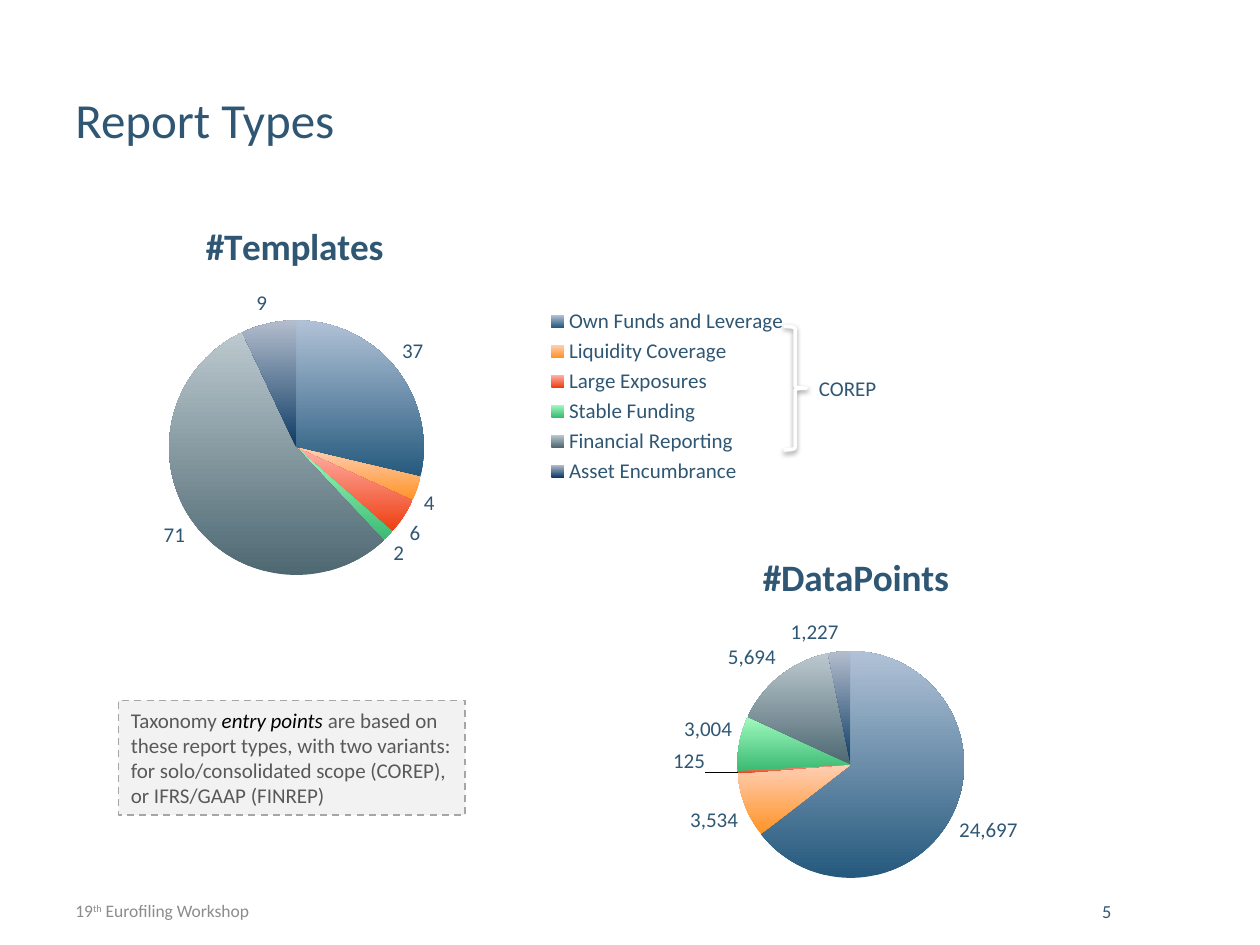
from lxml import etree
from pptx import Presentation
from pptx import util as u
from pptx.chart.data import CategoryChartData
from pptx.dml.color import RGBColor
from pptx.enum import chart as charts, dml, shapes, text
from pptx.oxml import ns

NAVY = RGBColor(0x2F, 0x57, 0x73)
GREY = RGBColor(0x8C, 0x8C, 0x8C)
DARK_GREY = RGBColor(0x59, 0x59, 0x59)
PALE_GREY = RGBColor(0xF2, 0xF2, 0xF2)
BORDER_GREY = RGBColor(0xA6, 0xA6, 0xA6)
BLACK = RGBColor(0, 0, 0)
WHITE = RGBColor(0xFF, 0xFF, 0xFF)
# Bottom and top colour of each report type
SLICES = [
    (RGBColor(0x25, 0x59, 0x7D), RGBColor(0xB1, 0xC2, 0xD7)),
    (RGBColor(0xFF, 0x93, 0x26), RGBColor(0xFF, 0xCF, 0xB5)),
    (RGBColor(0xEE, 0x3E, 0x10), RGBColor(0xFF, 0xB1, 0xAA)),
    (RGBColor(0x3A, 0xBA, 0x72), RGBColor(0xA2, 0xFA, 0xBF)),
    (RGBColor(0x4E, 0x68, 0x72), RGBColor(0xBC, 0xC9, 0xCF)),
    (RGBColor(0x0C, 0x3B, 0x64), RGBColor(0xB4, 0xBD, 0xCD)),
]
REPORT_TYPES = ["Own Funds and Leverage", "Liquidity Coverage", "Large Exposures",
                "Stable Funding", "Financial Reporting", "Asset Encumbrance"]


def set_all(target, values):
    for name, value in values.items():
        setattr(target, name, value)


def set_layout(parent, after=None, inner=False, edge=True, **fractions):
    """Give a chart part a manual layout, as fractions of the chart."""
    for old in parent.findall(ns.qn("c:layout")):
        parent.remove(old)
    layout = etree.Element(ns.qn("c:layout"))
    manual = etree.SubElement(layout, ns.qn("c:manualLayout"))
    values = {"layoutTarget": "inner"} if inner else {}
    if edge:
        values.update(xMode="edge", yMode="edge")
    values.update(fractions)
    for name, value in values.items():
        etree.SubElement(manual, ns.qn("c:" + name)).set("val", str(value))
    previous = parent.find(ns.qn(after)) if after else None
    parent.insert(0 if previous is None else parent.index(previous) + 1, layout)


class SlideBuilder:
    font_name = "Calibri"

    def __init__(self, slide):
        self.slide = slide

    def style(self, font, size, color, **values):
        set_all(font, dict(name=self.font_name, size=u.Pt(size), **values))
        font.color.rgb = color

    def fill_text(self, shape, runs, size, align):
        """Fill a shape with one paragraph of (words, colour, font values, baseline)."""
        frame = shape.text_frame
        set_all(frame, dict(word_wrap=True, vertical_anchor=text.MSO_ANCHOR.MIDDLE))
        paragraph = frame.paragraphs[0]
        paragraph.alignment = align
        for words, color, values, baseline in runs:
            run = paragraph.add_run()
            run.text = words
            self.style(run.font, size, color, **values)
            if baseline:
                run.font._element.set("baseline", str(baseline))

    def label(self, box, runs, size, align=text.PP_ALIGN.JUSTIFY):
        shape = self.slide.shapes.add_textbox(*map(u.Cm, box))
        self.fill_text(shape, runs, size, align)

    def shape(self, kind, box, line, width):
        shape = self.slide.shapes.add_shape(kind, *map(u.Cm, box))
        shape.shadow.inherit = False
        shape.fill.background()
        shape.line.color.rgb = line
        shape.line.width = u.Pt(width)
        return shape

    def brace(self, box):
        brace = self.shape(shapes.MSO_SHAPE.RIGHT_BRACE, box, WHITE, 2)
        effects = brace._element.spPr.find(ns.qn("a:effectLst"))
        shadow = etree.SubElement(
            effects, ns.qn("a:outerShdw"), blurRad=str(u.Pt(3.1)),
            dist=str(u.Pt(1.6)), dir="5400000", rotWithShape="0")
        color = etree.SubElement(shadow, ns.qn("a:srgbClr"), val=str(BLACK))
        etree.SubElement(color, ns.qn("a:alpha"), val="38000")

    def note(self, box, runs, size):
        note = self.shape(shapes.MSO_SHAPE.RECTANGLE, box, BORDER_GREY, 1)
        note.fill.solid()
        note.fill.fore_color.rgb = PALE_GREY
        note.line.dash_style = dml.MSO_LINE.DASH
        self.fill_text(note, runs, size, text.PP_ALIGN.LEFT)

    def pie(self, box, title, categories, values, title_at, plot_at):
        data = CategoryChartData(number_format="#,##0")
        data.categories = categories
        data.add_series(title, values)
        chart = self.slide.shapes.add_chart(
            charts.XL_CHART_TYPE.PIE, *map(u.Cm, box), data).chart
        self.style(chart.font, 10, BLACK)
        chart.has_legend = False

        # Title and plot area
        chart.has_title = True
        paragraph = chart.chart_title.text_frame.paragraphs[0]
        run = paragraph.add_run()
        run.text = title
        self.style(run.font, 21.3, NAVY, bold=True)
        set_layout(chart.chart_title._element, "c:tx", **title_at)
        plot_area = chart._chartSpace.chart.plotArea
        set_layout(plot_area, inner=True, **plot_at)

        # Slices and their values
        plot = chart.plots[0]
        plot.vary_by_categories = True
        series = plot.series[0]
        for index, colors in enumerate(SLICES):
            fill = series.points[index].format.fill
            fill.gradient()
            fill.gradient_angle = 90
            for stop, color in zip(fill.gradient_stops, colors):
                stop.color.rgb = color
        labels = series.data_labels
        set_all(labels, dict(show_value=True, number_format="#,##0",
                             number_format_is_linked=False,
                             position=charts.XL_LABEL_POSITION.OUTSIDE_END))
        self.style(labels.font, 12, NAVY)
        return chart

    def move_label(self, chart, index, x, y):
        series = chart.plots[0].series[0]
        label = series.points[index].data_label
        self.style(label.font, 12, NAVY)
        label.position = charts.XL_LABEL_POSITION.OUTSIDE_END
        element = series.data_labels._element.find(ns.qn("c:dLbl"))
        set_layout(element, "c:idx", edge=False, x=x, y=y)

    def legend(self, chart, **place):
        chart.has_legend = True
        set_all(chart.legend, dict(position=charts.XL_LEGEND_POSITION.RIGHT,
                                   include_in_layout=False))
        self.style(chart.legend.font, 12, NAVY)
        set_layout(chart.legend._element, "c:legendPos", **place)


def main():
    presentation = Presentation()
    set_all(presentation, dict(slide_width=u.Cm(25.4), slide_height=u.Cm(19.05)))
    builder = SlideBuilder(presentation.slides.add_slide(presentation.slide_layouts[6]))

    # Title, footer and slide number
    builder.label((1.27, 1.63, 18.52, 1.55), [("Report Types", NAVY, {}, 0)], 28)
    builder.label((1.27, 18.06, 13.67, 0.61),
                  [("19", GREY, {}, 0), ("th", GREY, {}, 30000),
                   (" Eurofiling Workshop", GREY, {}, 0)], 10)
    builder.label((21.97, 18.06, 2.16, 0.61), [("5", NAVY, {}, 0)], 10.5)

    # Pie charts
    data_points = builder.pie(
        (10.8, 10.46, 12.7, 7.62), "#DataPoints", list("123456"),
        (24697, 3534, 125, 3004, 5694, 1227),
        dict(x=0.35, y=0.07), dict(x=0.32, y=0.35, w=0.36, h=0.6))
    builder.move_label(data_points, 2, -0.04, -0.03)
    templates = builder.pie(
        (0.99, 3.81, 15.11, 8.28), "#Templates", REPORT_TYPES, (37, 4, 6, 2, 71, 9),
        dict(x=0.2, y=0.06), dict(x=0.16, y=0.32, w=0.34, h=0.62))
    builder.legend(templates, x=0.66, y=0.28, w=0.33, h=0.45)

    # Grouping of the legend entries
    builder.brace((15.8, 6.58, 0.46, 2.49))
    builder.label((16.26, 7.44, 2.64, 0.76), [("COREP", NAVY, {}, 0)], 12,
                  text.PP_ALIGN.LEFT)

    # Note on entry points
    builder.note((2.39, 14.12, 6.99, 2.31), [
        ("Taxonomy ", DARK_GREY, {}, 0),
        ("entry points ", BLACK, {"italic": True}, 0),
        ("are based on these report types, with two variants: for solo/consolidated "
         "scope (COREP), or IFRS/GAAP (FINREP)", DARK_GREY, {}, 0)], 12)

    presentation.save("out.pptx")


if __name__ == "__main__":
    main()
